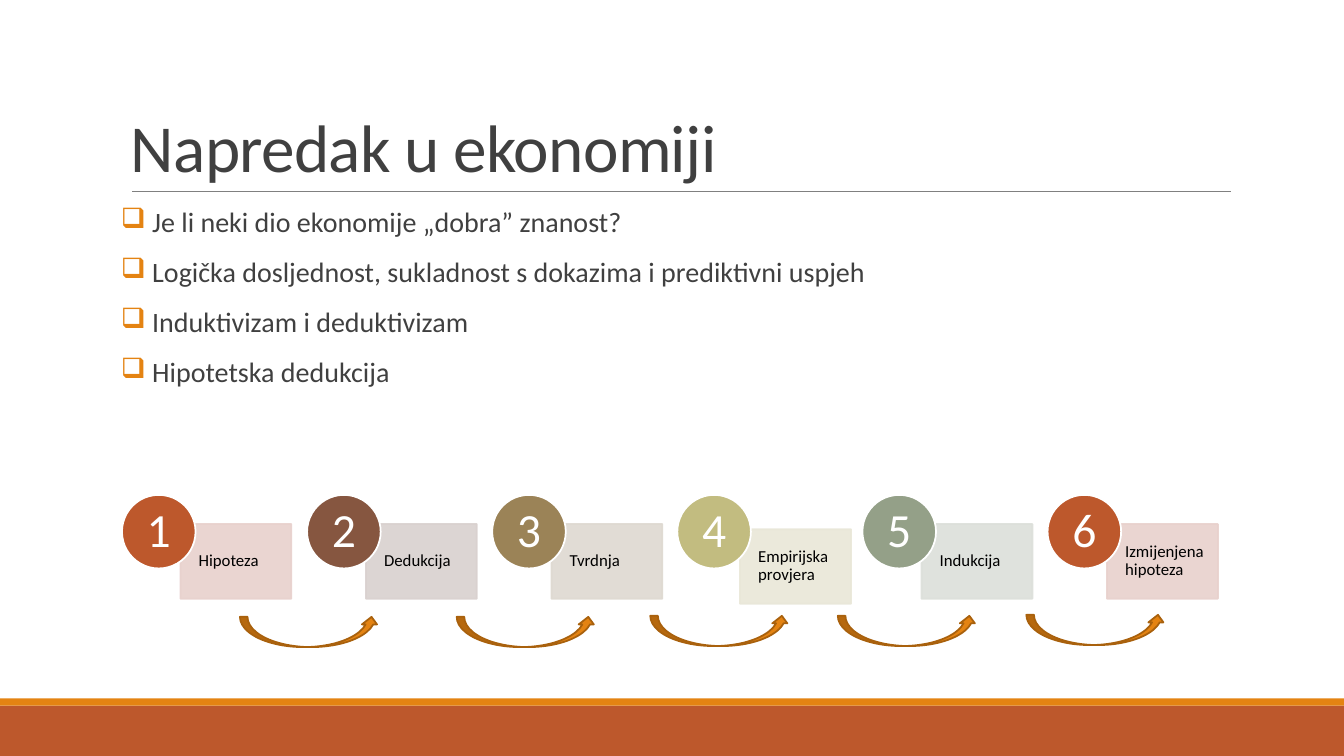
"""Builds the slide on progress in economics with its six-step cycle."""
from pptx import Presentation
from pptx.dml.color import RGBColor
from pptx.enum.shapes import MSO_CONNECTOR, MSO_SHAPE as Preset
from pptx.enum.text import MSO_ANCHOR as Anchor, PP_ALIGN as Align
from pptx.oxml.ns import qn
from pptx.util import Inches, Pt
from lxml.etree import SubElement

ORANGE, RUST, GREY = "E48312", "BD582C", "404040"


def paint(target, color, alpha=None):
    target.solid()
    target.fore_color.rgb = RGBColor.from_string(color)
    if alpha:
        srgb = target._xPr.find(qn("a:solidFill"))[0]
        SubElement(srgb, qn("a:alpha"), val=str(alpha * 1000))


def add_block(preset, at, color, outline=None, alpha=None):
    block = slide.shapes.add_shape(preset, *map(Inches, at))
    block.shadow.inherit = False
    paint(block.fill, color, alpha)
    if outline:
        paint(block.line.fill, outline, alpha)
        block.line.width = Pt(1.25)
    else:
        block.line.fill.background()
    return block


prs = Presentation()
prs.slide_width, prs.slide_height = Inches(13.33), Inches(7.5)
slide = prs.slides.add_slide(prs.slide_layouts[6])

add_block(Preset.RECTANGLE, (0, 7, 13.33, 0.5), RUST)
add_block(Preset.RECTANGLE, (0, 6.93, 13.33, 0.07), ORANGE)
rule = slide.shapes.add_connector(
    MSO_CONNECTOR.STRAIGHT, Inches(1.31), Inches(1.9), Inches(12.21), Inches(1.9))
paint(rule.line.fill, "808080")
rule.line.width = Pt(0.5)
SubElement(rule._element.spPr, qn("a:effectLst"))

title = slide.shapes.add_textbox(Inches(1.2), Inches(0.31), Inches(11), Inches(1.59)).text_frame
title.word_wrap = True
title.vertical_anchor = Anchor.BOTTOM
title.text = "Napredak u ekonomiji"
heading = title.paragraphs[0]
heading.line_spacing = 0.85
heading.runs[0].font.size = Pt(48)
heading.runs[0].font.name = "Calibri"
paint(heading.runs[0].font.fill, GREY)
heading.runs[0].font._element.set("spc", "-50")

body = slide.shapes.add_textbox(Inches(1.2), Inches(2.02), Inches(11), Inches(4.4)).text_frame
body.word_wrap = True
body.margin_left = body.margin_right = 0
body.text = "\n".join([
    "Je li neki dio ekonomije „dobra” znanost?",
    "Logička dosljednost, sukladnost s dokazima i prediktivni uspjeh",
    "Induktivizam i deduktivizam",
    "Hipotetska dedukcija",
])
for point in body.paragraphs:
    point.line_spacing = 0.9
    point.space_before, point.space_after = Pt(12), Pt(2)
    point.runs[0].font.size = Pt(20)
    point.runs[0].font.name = "Calibri"
    paint(point.runs[0].font.fill, GREY)
    props = point._p.get_or_add_pPr()
    props.set("marL", str(Inches(0.31)))
    props.set("indent", str(-Inches(0.31)))
    SubElement(SubElement(props, qn("a:buClr")), qn("a:srgbClr"), val=ORANGE)
    SubElement(props, qn("a:buChar"), char="❑")

steps = [
    ("Hipoteza", RUST, "E8D1CD", 1.79, 5.2),
    ("Dedukcija", "865640", "D9D1CF", 3.63, 5.2),
    ("Tvrdnja", "9B8357", "DED9D1", 5.47, 5.2),
    ("Empirijska provjera", "C2BC80", "E9E7D8", 7.34, 5.25),
    ("Indukcija", "94A088", "DCDFDA", 9.14, 5.2),
    ("Izmijenjena hipoteza", RUST, "E8D1CD", 10.98, 5.2),
]
for number, (name, color, tint, left, top) in enumerate(steps, 1):
    card = add_block(Preset.RECTANGLE, (left, top, 1.1, 0.74), tint, tint, 90)
    badge_left = 1.21 + (number - 1) * 1.836
    badge = add_block(Preset.OVAL, (badge_left, 4.91, 0.73, 0.73), color, "FFFFFF")
    for part, text, size, ink, align, margins in (
        (card, name, 12, "000000", Align.LEFT, (0.18, 0.09, 0, 0.09)),
        (badge, str(number), 34, "FFFFFF", Align.CENTER, (0, 0, 0, 0)),
    ):
        frame = part.text_frame
        frame.word_wrap = True
        frame.vertical_anchor = Anchor.MIDDLE
        (frame.margin_left, frame.margin_top,
         frame.margin_right, frame.margin_bottom) = map(Inches, margins)
        frame.text = text
        label = frame.paragraphs[0]
        label.alignment = align
        label.line_spacing = 0.9
        label.runs[0].font.size = Pt(size)
        label.runs[0].font.name = "Calibri"
        paint(label.runs[0].font.fill, ink)

for left, top in ((2.38, 6.12), (4.53, 6.12), (6.45, 6.11), (8.31, 6.11), (10.18, 6.1)):
    add_block(Preset.CURVED_UP_ARROW, (left, top, 1.38, 0.3), ORANGE, "A9610D")

prs.save("out.pptx")
